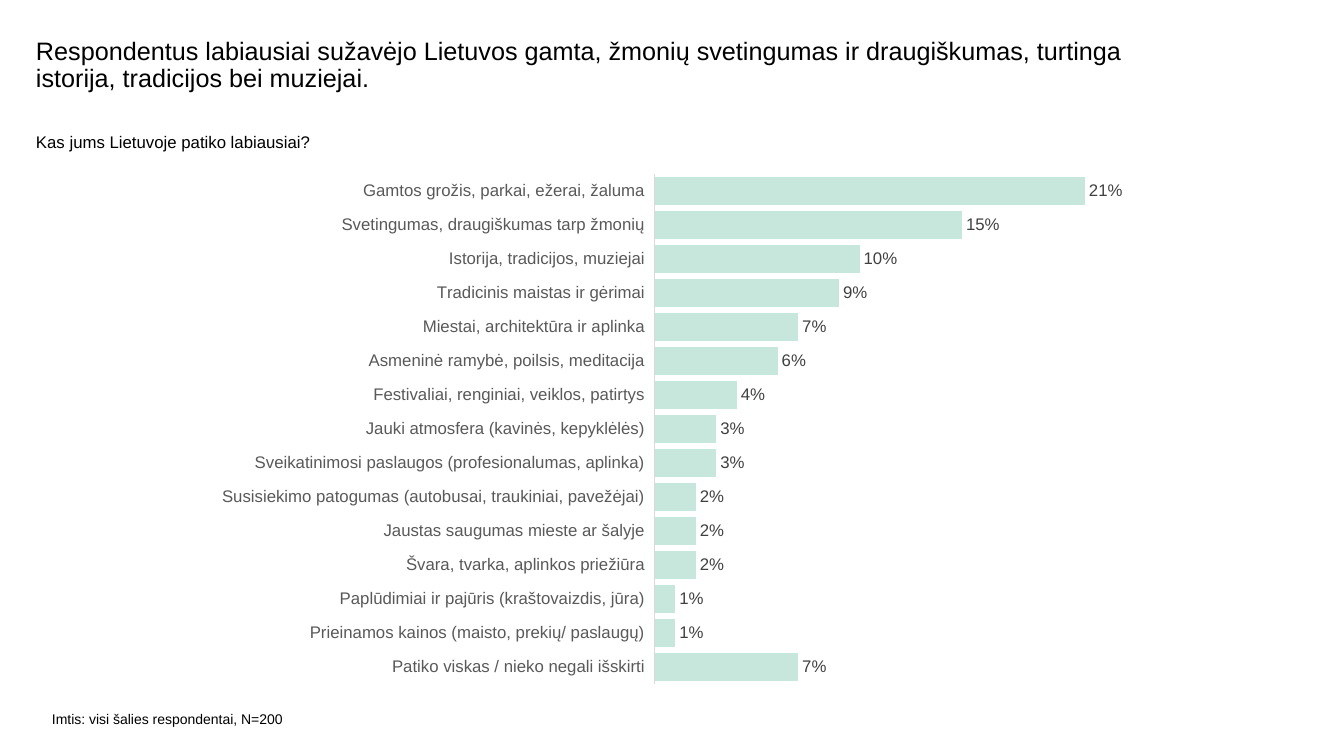
from pptx import Presentation
from pptx.chart.data import CategoryChartData
from pptx.dml.color import RGBColor
from pptx.enum.chart import XL_CHART_TYPE, XL_LABEL_POSITION, XL_TICK_LABEL_POSITION, XL_TICK_MARK
from pptx.enum.text import MSO_ANCHOR
from pptx.oxml import parse_xml
from pptx.oxml.ns import nsdecls
from pptx.util import Emu, Pt

BAR = XL_CHART_TYPE.BAR_CLUSTERED
OUTSIDE = XL_LABEL_POSITION.OUTSIDE_END
LOW = XL_TICK_LABEL_POSITION.LOW
NO_TICK = XL_TICK_MARK.NONE
TOP = MSO_ANCHOR.TOP

BLACK = RGBColor(0x00, 0x00, 0x00)
GREY = RGBColor(0x59, 0x59, 0x59)
DARK = RGBColor(0x40, 0x40, 0x40)
RULE = RGBColor(0xD9, 0xD9, 0xD9)
MINT = RGBColor(0xC7, 0xE6, 0xDC)
FONT = "Arial"


def px(n):
    return Emu(round(n * 914400 / 100.8))


def add_text(s, text, x, y, w, h, size, spacing=1.0):
    tf = s.shapes.add_textbox(px(x), px(y), px(w), px(h)).text_frame
    tf.word_wrap = True
    tf.vertical_anchor = TOP
    tf.margin_left = tf.margin_top = tf.margin_right = tf.margin_bottom = 0
    p = tf.paragraphs[0]
    p.line_spacing = spacing
    r = p.add_run()
    r.text = text
    r.font.size, r.font.name, r.font.color.rgb = Pt(size), FONT, BLACK


prs = Presentation()
prs.slide_width, prs.slide_height = px(1344), px(756)
s = prs.slides.add_slide(prs.slide_layouts[6])

# Heading, question and sample note
add_text(s, "Respondentus labiausiai sužavėjo Lietuvos gamta, žmonių svetingumas ir "
         "draugiškumas, turtinga istorija, tradicijos bei muziejai.",
         36, 39, 1151, 60, 18, spacing=0.9)
add_text(s, "Kas jums Lietuvoje patiko labiausiai?", 36, 132, 1199, 61, 12)
add_text(s, "Imtis: visi šalies respondentai, N=200", 52, 711, 389, 28, 10)

# Answers, from the top bar down
answers = [
    ("Gamtos grožis, parkai, ežerai, žaluma", 0.21),
    ("Svetingumas, draugiškumas tarp žmonių", 0.15),
    ("Istorija, tradicijos, muziejai", 0.10),
    ("Tradicinis maistas ir gėrimai", 0.09),
    ("Miestai, architektūra ir aplinka", 0.07),
    ("Asmeninė ramybė, poilsis, meditacija", 0.06),
    ("Festivaliai, renginiai, veiklos, patirtys", 0.04),
    ("Jauki atmosfera (kavinės, kepyklėlės)", 0.03),
    ("Sveikatinimosi paslaugos (profesionalumas, aplinka)", 0.03),
    ("Susisiekimo patogumas (autobusai, traukiniai, pavežėjai)", 0.02),
    ("Jaustas saugumas mieste ar šalyje", 0.02),
    ("Švara, tvarka, aplinkos priežiūra", 0.02),
    ("Paplūdimiai ir pajūris (kraštovaizdis, jūra)", 0.01),
    ("Prieinamos kainos (maisto, prekių/ paslaugų)", 0.01),
    ("Patiko viskas / nieko negali išskirti", 0.07),
]
data = CategoryChartData(number_format="0%")
data.categories = [name for name, share in reversed(answers)]
data.add_series("Series 1", [share for name, share in reversed(answers)])

# Bar chart
left, top, width, height = 205, 163, 982, 532
chart = s.shapes.add_chart(BAR, px(left), px(top), px(width), px(height), data).chart
chart.has_title = False
chart.has_legend = False
chart.font.size, chart.font.name, chart.font.color.rgb = Pt(10), FONT, BLACK

cat = chart.category_axis
cat.major_tick_mark = cat.minor_tick_mark = NO_TICK
cat.tick_label_position = LOW
cat.format.line.color.rgb, cat.format.line.width = RULE, Pt(0.75)
val = chart.value_axis
val.minimum_scale, val.maximum_scale = 0, 0.25
val.has_major_gridlines = False
val.visible = False

plot = chart.plots[0]
plot.gap_width = 20
plot.vary_by_categories = False
fill = plot.series[0].format.fill
fill.solid()
fill.fore_color.rgb = MINT
plot.has_data_labels = True
labels = plot.data_labels
labels.show_value = True
labels.position = OUTSIDE
labels.number_format, labels.number_format_is_linked = "0%", False
for font, color in ((cat.tick_labels.font, GREY), (labels.font, DARK)):
    font.size, font.name, font.color.rgb = Pt(12), FONT, color

# Fixed plot area, as fractions of the chart frame
area = {"x": (655 - left) / width, "y": (174 - top) / height, "w": 512 / width, "h": 510 / height}
modes = "".join(f'<c:{k}Mode val="edge"/>' for k in "xy")
sizes = "".join(f'<c:{k} val="{v:.4f}"/>' for k, v in area.items())
plot_area = chart._chartSpace.chart.plotArea
for old in plot_area.xpath("c:layout"):
    plot_area.remove(old)
plot_area.insert(0, parse_xml(
    f'<c:layout {nsdecls("c")}><c:manualLayout><c:layoutTarget val="inner"/>'
    f'{modes}{sizes}</c:manualLayout></c:layout>'))

prs.save("out.pptx")
